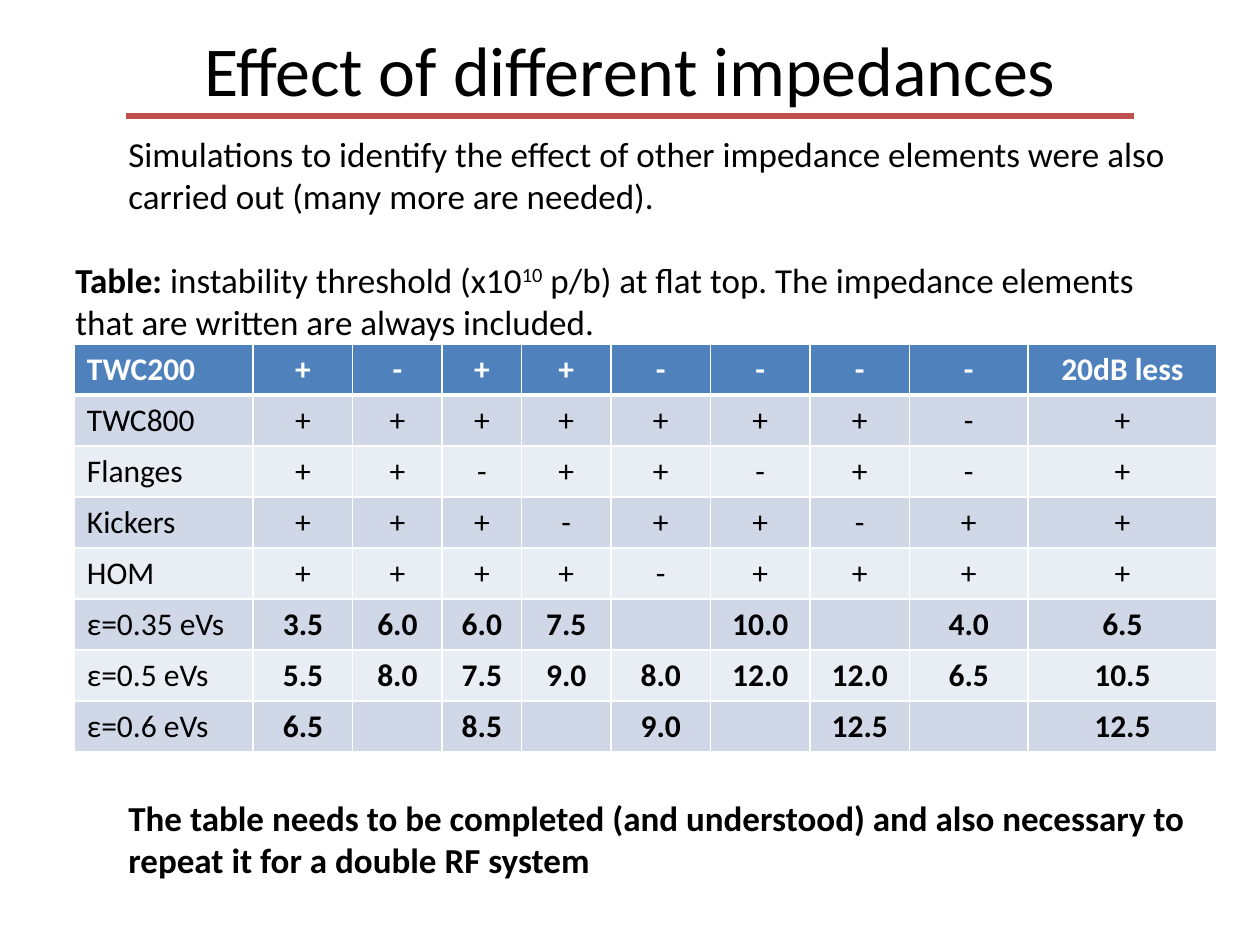
"""Build the slide on the effect of different impedances."""
from lxml import etree
from pptx import Presentation, util as u
from pptx.dml.color import RGBColor
from pptx.enum import shapes, text
from pptx.oxml import ns

COLORS = {"ink": "000000", "paper": "FFFFFF", "rule": "C0504D",
          "head": "4F81BD", "odd": "D0D8E8", "even": "E9EDF4"}
WIDTHS = (14.2, 7.9, 7.1, 6.3, 7.1, 7.9, 7.9, 7.9, 9.4, 15)
SIGNS = (("TWC200", "+-++----", "20dB less"),
         ("TWC800", "+++++++-", "+"),
         ("Flanges", "++-++-+-", "+"),
         ("Kickers", "+++-++-+", "+"),
         ("HOM", "++++-+++", "+"))
THRESHOLDS = (
    ("ε=0.35 eVs", "3.5", "6.0", "6.0", "7.5", "", "10.0", "", "4.0", "6.5"),
    ("ε=0.5 eVs", "5.5", "8.0", "7.5", "9.0", "8.0", "12.0", "12.0", "6.5", "10.5"),
    ("ε=0.6 eVs", "6.5", "", "8.5", "", "9.0", "", "12.5", "", "12.5"))


def rgb(name):
    return RGBColor.from_string(COLORS[name])


def add_run(p, content, size=20, bold=False, color="ink", font="Calibri", baseline=0):
    r = p.add_run()
    r.text = content
    r.font.name, r.font.size, r.font.bold = font, u.Pt(size), bold
    r.font.color.rgb = rgb(color)
    if baseline:
        r._r.get_or_add_rPr().set("baseline", str(baseline * 1000))


class Deck:
    """Hold the style and the current slide, measured on a 100 by 75 grid."""

    def __init__(self, prs, columns=100, rows=75):
        self.s = prs.slides.add_slide(prs.slide_layouts[6])
        self.col, self.row = prs.slide_width / columns, prs.slide_height / rows

    def x(self, n):
        return u.Emu(round(n * self.col))

    def y(self, n):
        return u.Emu(round(n * self.row))

    def box(self, left, top, width, height):
        return self.x(left), self.y(top), self.x(width), self.y(height)

    def text(self, at, *runs, align=text.PP_ALIGN.LEFT, anchor=text.MSO_ANCHOR.TOP):
        tf = self.s.shapes.add_textbox(*self.box(*at)).text_frame
        tf.word_wrap, tf.vertical_anchor = True, anchor
        p = tf.paragraphs[0]
        p.alignment = align
        for content, style in runs:
            add_run(p, content, **style)

    def line(self, x1, x2, y, color, width):
        sp = self.s.shapes.add_connector(shapes.MSO_CONNECTOR.STRAIGHT,
                                         self.x(x1), self.y(y), self.x(x2), self.y(y))
        sp.line.color.rgb, sp.line.width = rgb(color), u.Pt(width)
        etree.SubElement(sp._element.spPr, ns.qn("a:effectLst"))

    def borders(self, cell, **widths):
        tc_pr = cell._tc.get_or_add_tcPr()
        for side, width in widths.items():
            ln = etree.SubElement(tc_pr, ns.qn(f"a:ln{side}"), w=str(u.Pt(width)))
            fill = etree.SubElement(ln, ns.qn("a:solidFill"))
            etree.SubElement(fill, ns.qn("a:srgbClr"), val=COLORS["paper"])

    def cell(self, cell, content, fill, edges, align, **style):
        self.borders(cell, **edges)
        cell.fill.solid()
        cell.fill.fore_color.rgb = rgb(fill)
        p = cell.text_frame.paragraphs[0]
        p.alignment = align
        if content:
            add_run(p, content, size=18, **style)

    def table(self, left, top, widths, height, rows):
        at = self.box(left, top, sum(widths), height)
        table = self.s.shapes.add_table(len(rows), len(widths), *at).table
        for column, width in zip(table.columns, widths):
            column.width = self.x(width)
        for i, values in enumerate(rows):
            head = i == 0
            fill = "head" if head else "odd" if i % 2 else "even"
            edges = {"L": 1, "R": 1, "T": 3 if i == 1 else 1, "B": 3 if head else 1}
            for j, value in enumerate(values):
                align = text.PP_ALIGN.CENTER if j else text.PP_ALIGN.LEFT
                self.cell(table.cell(i, j), value, fill, edges, align,
                          bold=head or (i >= len(SIGNS) and j > 0),
                          color="paper" if head else "ink")


def main():
    prs = Presentation()
    prs.slide_width, prs.slide_height = u.Inches(10), u.Inches(7.5)
    deck = Deck(prs)
    deck.text((5, -0.8, 90, 12.5), ("Effect of different impedances", {"size": 40}),
              align=text.PP_ALIGN.CENTER, anchor=text.MSO_ANCHOR.MIDDLE)
    deck.line(10, 90, 9.2, "rule", 3)
    deck.text((9.2, 10, 88.9, 7.7),
              ("Simulations to identify the effect of other impedance elements "
               "were also carried out (many more are needed).", {}))
    rows = [(name, *signs, last) for name, signs, last in SIGNS] + list(THRESHOLDS)
    deck.table(5.9, 27.3, WIDTHS, 32.4, rows)
    deck.text((5, 20, 88.9, 7.7),
              ("Table: ", {"bold": True}),
              ("instability threshold (x10", {}),
              ("10", {"baseline": 30}),
              (" p/b) at flat top. The impedance elements that are written "
               "are always included.", {}))
    deck.text((9.2, 62.7, 88.9, 7.7),
              ("The table needs to be completed (and understood) and also "
               "necessary to repeat it for a double RF system", {"bold": True}))
    prs.save("out.pptx")


if __name__ == "__main__":
    main()
